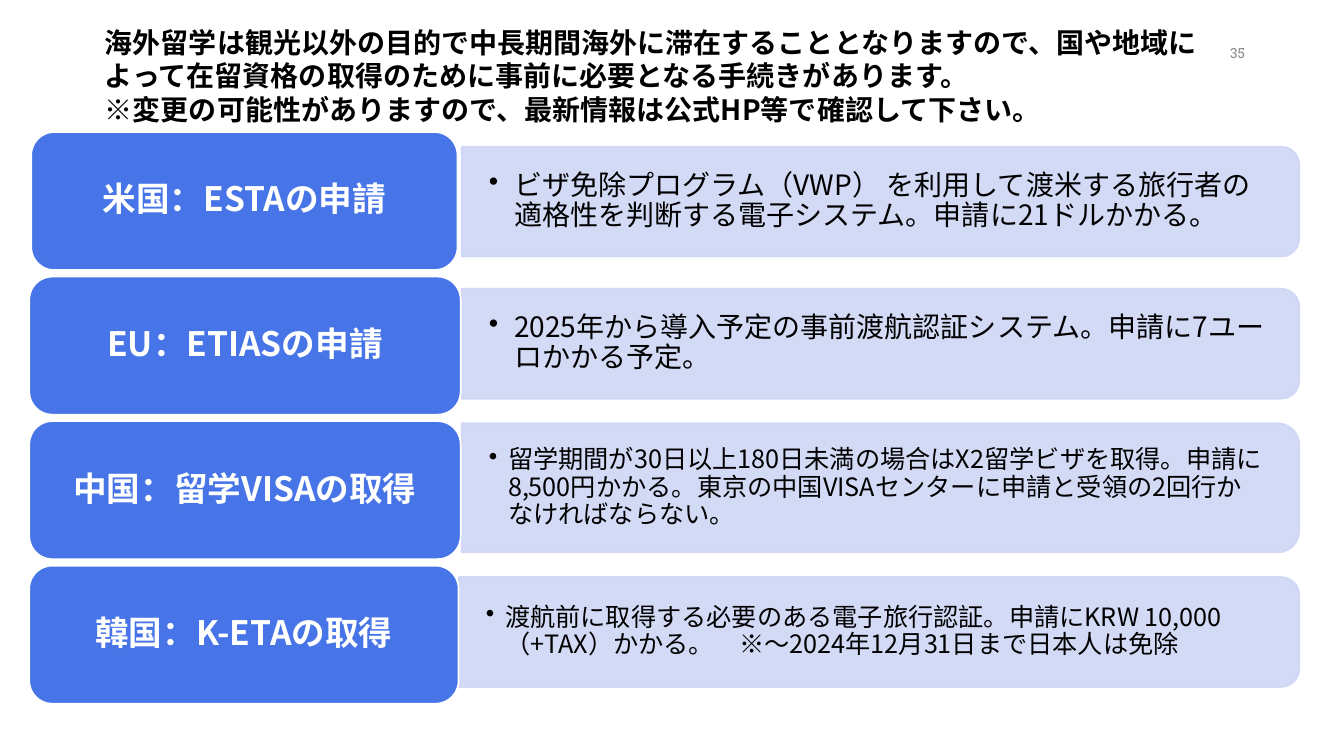
"""Build a slide on the entry procedures that students need before going abroad."""
import pptx
import pptx.dml.color
import pptx.enum.shapes
import pptx.enum.text
import pptx.oxml
import pptx.oxml.ns
import pptx.util
from lxml import etree

Inches = pptx.util.Inches
Pt = pptx.util.Pt
RGBColor = pptx.dml.color.RGBColor
MSO_SHAPE = pptx.enum.shapes.MSO_SHAPE
PP_ALIGN = pptx.enum.text.PP_ALIGN
MSO_ANCHOR = pptx.enum.text.MSO_ANCHOR
qn = pptx.oxml.ns.qn

BLUE = RGBColor(0x47, 0x75, 0xE7)
PALE_BLUE = RGBColor(0xCF, 0xD6, 0xF6)
WHITE = RGBColor(0xFF, 0xFF, 0xFF)
BLACK = RGBColor(0, 0, 0)
GRAY = RGBColor(0x8C, 0x8C, 0x8C)
BODY_FONT = "Noto Sans CJK JP"
NUMBER_FONT = "Roboto Slab"

FIRST_ROW, ROW_STEP, LABEL_HEIGHT = 1.31, 1.434, 1.37
PANEL_RIGHT, DETAIL_RIGHT = 12.89, 12.83

INTRO = [
    "海外留学は観光以外の目的で中長期間海外に滞在することとなりますので、国や地域によって在留資格の取得のために事前に必要となる手続きがあります。",
    "※変更の可能性がありますので、最新情報は公式HP等で確認して下さい。",
]
# label, label left, label width, panel left, panel centre, panel height, size, indent, detail
PROCEDURES = [
    ("米国：ESTAの申請", 0.31, 4.23, 4.58, 2.0, 1.09, 20, 0.25,
     "ビザ免除プログラム（VWP） を利用して渡米する旅行者の適格性を判断する電子システム。申請に21ドルかかる。"),
    ("EU：ETIASの申請", 0.29, 4.28, 4.58, 3.41, 1.09, 20, 0.25,
     "2025年から導入予定の事前渡航認証システム。申請に7ユーロかかる予定。"),
    ("中国：留学VISAの取得", 0.29, 4.28, 4.58, 4.84, 1.28, 18, 0.19,
     "留学期間が30日以上180日未満の場合はX2留学ビザを取得。申請に8,500円かかる。東京の中国VISAセンターに申請と受領の2回行かなければならない。"),
    ("韓国：K-ETAの取得", 0.29, 4.26, 4.55, 6.27, 1.09, 18, 0.19,
     "渡航前に取得する必要のある電子旅行認証。申請にKRW 10,000（+TAX）かかる。　※～2024年12月31日まで日本人は免除"),
]


def add_run(paragraph, text, size, color, bold=False, font=BODY_FONT):
    run = paragraph.add_run()
    run.text = text
    run.font.size = Pt(size)
    run.font.bold = bold
    run.font.color.rgb = color
    run.font.name = font
    etree.SubElement(run.font._element, qn("a:ea")).set("typeface", font)


def add_block(shapes, outline, box, fill, line):
    block = shapes.add_shape(outline, *[Inches(length) for length in box])
    block.shadow.inherit = False
    block.fill.solid()
    block.fill.fore_color.rgb = fill
    block.line.color.rgb = line
    block.line.width = Pt(1.25)
    return block


presentation = pptx.Presentation()
presentation.slide_width = Inches(13.333)
presentation.slide_height = Inches(7.5)
slide = presentation.slides.add_slide(presentation.slide_layouts[5])

for row, (label, label_left, label_width, panel_left, centre, height,
          size, indent, detail) in enumerate(PROCEDURES):
    length = PANEL_RIGHT - panel_left
    middle = (PANEL_RIGHT + panel_left) / 2
    panel = add_block(slide.shapes, MSO_SHAPE.ROUND_2_SAME_RECTANGLE,
                      (middle - height / 2, centre - length / 2, height, length),
                      PALE_BLUE, PALE_BLUE)
    panel.rotation = 90
    for color in panel._element.spPr.iter(qn("a:srgbClr")):
        etree.SubElement(color, qn("a:alpha")).set("val", "90000")

    description = slide.shapes.add_textbox(
        Inches(panel_left), Inches(centre - height / 2),
        Inches(DETAIL_RIGHT - panel_left), Inches(height)).text_frame
    description.word_wrap = True
    description.vertical_anchor = MSO_ANCHOR.MIDDLE
    description.margin_left = description.margin_right = Inches(0.27)
    description.margin_top = description.margin_bottom = Inches(0.14)
    bullet = description.paragraphs[0]
    bullet.level = 1
    bullet.line_spacing = 0.9
    properties = bullet._p.get_or_add_pPr()
    properties.set("marL", str(Inches(indent)))
    properties.set("indent", str(-Inches(indent)))
    etree.SubElement(properties, qn("a:buChar")).set("char", "•")
    add_run(bullet, detail, size, BLACK)

    country = add_block(slide.shapes, MSO_SHAPE.ROUNDED_RECTANGLE,
                        (label_left, FIRST_ROW + row * ROW_STEP, label_width, LABEL_HEIGHT),
                        BLUE, WHITE).text_frame
    country.word_wrap = True
    country.vertical_anchor = MSO_ANCHOR.MIDDLE
    heading = country.paragraphs[0]
    heading.alignment = PP_ALIGN.CENTER
    heading.line_spacing = 0.9
    add_run(heading, label, 24, WHITE, bold=True)

intro = slide.shapes.title
intro.left, intro.top = Inches(0.94), Inches(0.2)
intro.width, intro.height = Inches(11.28), Inches(1.11)
intro.text_frame.word_wrap = True
intro.text_frame.auto_size = pptx.enum.text.MSO_AUTO_SIZE.NONE
intro.text_frame.vertical_anchor = MSO_ANCHOR.TOP
for index, sentence in enumerate(INTRO):
    paragraph = intro.text_frame.add_paragraph() if index else intro.text_frame.paragraphs[0]
    paragraph.alignment = PP_ALIGN.LEFT
    add_run(paragraph, sentence, 20, BLACK, bold=True)

page_number = slide.shapes.add_textbox(
    Inches(11.45), Inches(0.35), Inches(1), Inches(0.35)).text_frame
page_number.word_wrap = True
page_number.vertical_anchor = MSO_ANCHOR.MIDDLE
page_number.paragraphs[0].alignment = PP_ALIGN.RIGHT
add_run(page_number.paragraphs[0], "35", 10, GRAY, font=NUMBER_FONT)

presentation.save("out.pptx")
